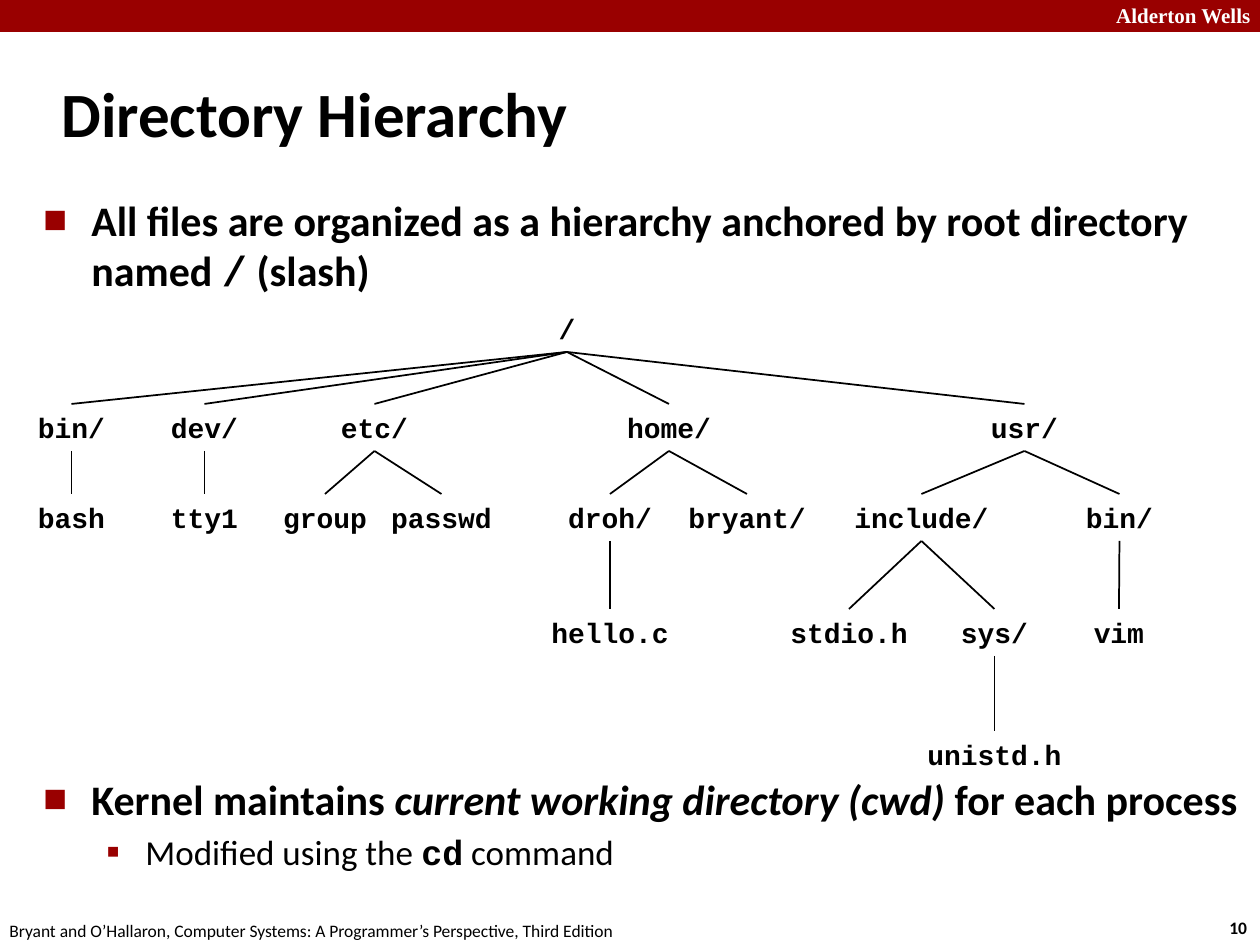
"""Build the Directory Hierarchy slide with its bulleted text and file tree."""
from lxml import etree
from pptx import Presentation
from pptx.dml.color import RGBColor
from pptx.enum.shapes import MSO_CONNECTOR, MSO_SHAPE
from pptx.enum.text import MSO_ANCHOR, PP_ALIGN
from pptx.oxml.ns import qn
from pptx.util import Pt

PX = 914400 // 126
LEFT, CENTER, RIGHT = PP_ALIGN.LEFT, PP_ALIGN.CENTER, PP_ALIGN.RIGHT
MIDDLE = MSO_ANCHOR.MIDDLE
RECTANGLE = MSO_SHAPE.RECTANGLE
STRAIGHT = MSO_CONNECTOR.STRAIGHT
BOTTOM_SIDE, TOP_SIDE = 2, 0
SANS, MONO, SERIF = "Calibri", "Courier New", "Times New Roman"
BLACK, WHITE, CRIMSON = "000000", "FFFFFF", "990000"
color = RGBColor.from_string


def add_box(left, top, width, height):
    box = slide.shapes.add_textbox(left * PX, top * PX, width * PX, height * PX)
    box.text_frame.word_wrap = True
    return box


def write(paragraph, size, runs, align=LEFT, ink=BLACK):
    paragraph.alignment = align
    for text, face, bold, italic in runs:
        run = paragraph.add_run()
        run.text = text
        run.font.name = face
        run.font.size = Pt(size)
        run.font.bold = bold
        run.font.italic = italic
        run.font.color.rgb = color(ink)


prs = Presentation()
prs.slide_width, prs.slide_height = 1260 * PX, 945 * PX
slide = prs.slides.add_slide(prs.slide_layouts[6])

banner = slide.shapes.add_shape(RECTANGLE, 0, 0, 1260 * PX, 32 * PX)
banner.shadow.inherit = False
banner.fill.solid()
banner.fill.fore_color.rgb = color(CRIMSON)
banner.line.fill.background()

captions = [
    ((1089, -4, 174, 38), 12, "Alderton Wells", SERIF, True, RIGHT, WHITE),
    ((1217, 911, 47, 34), 10, "10", SANS, True, LEFT, BLACK),
    ((-3, 914, 640, 34), 10,
     "Bryant and O’Hallaron, Computer Systems: A Programmer’s Perspective, Third Edition",
     SANS, False, LEFT, BLACK),
]
for place, size, text, face, bold, align, ink in captions:
    caption = add_box(*place)
    write(caption.text_frame.paragraphs[0], size, [(text, face, bold, False)], align, ink)

title = add_box(49, 60, 1046, 105)
title.text_frame.vertical_anchor = MIDDLE
write(title.text_frame.paragraphs[0], 36, [("Directory Hierarchy", SANS, True, False)])

main_style = (24, 48, 48, "■", 60)
detail_style = (20, 102, 39, "▪", 110)
points = [
    (188, 120, [
        (main_style, [
            ("All files are organized as a hierarchy anchored by root directory named ",
             SANS, True, False),
            ("/", MONO, True, False),
            (" (slash)", SANS, True, False)]),
    ]),
    (767, 120, [
        (main_style, [
            ("Kernel maintains ", SANS, True, False),
            ("current working directory (cwd) ", SANS, True, True),
            ("for each process", SANS, True, False)]),
        (detail_style, [
            ("Modified using the ", SANS, False, False),
            ("cd", MONO, True, False),
            (" command", SANS, False, False)]),
    ]),
]
for top, height, bullets in points:
    frame = add_box(31, top, 1226, height).text_frame
    for index, (style, runs) in enumerate(bullets):
        size, margin, hang, mark, percent = style
        bullet = frame.add_paragraph() if index else frame.paragraphs[0]
        bullet.space_before = Pt(size * 0.2)
        write(bullet, size, runs)
        props = bullet._p.get_or_add_pPr()
        props.set("marL", str(margin * PX))
        props.set("indent", str(-hang * PX))
        mark_color = etree.SubElement(props, qn("a:buClr"))
        etree.SubElement(mark_color, qn("a:srgbClr"), val=CRIMSON)
        etree.SubElement(props, qn("a:buSzPct"), val=str(percent * 1000))
        etree.SubElement(props, qn("a:buFont"), typeface=SANS)
        etree.SubElement(props, qn("a:buChar"), char=mark)

row_tops = [305, 404, 494, 609, 731]
entries = [
    ("", "/", 567),
    ("/", "bin/", 71),
    ("/", "dev/", 204),
    ("/", "etc/", 374),
    ("/", "home/", 669),
    ("/", "usr/", 1024),
    ("/bin/", "bash", 71),
    ("/dev/", "tty1", 204),
    ("/etc/", "group", 325),
    ("/etc/", "passwd", 441),
    ("/home/", "droh/", 610),
    ("/home/", "bryant/", 747),
    ("/usr/", "include/", 921),
    ("/usr/", "bin/", 1119),
    ("/home/droh/", "hello.c", 610),
    ("/usr/include/", "stdio.h", 849),
    ("/usr/include/", "sys/", 994),
    ("/usr/bin/", "vim", 1119),
    ("/usr/include/sys/", "unistd.h", 994),
]
tree = {}
for parent, name, middle in entries:
    width = 17 * len(name) + 25
    entry = add_box(middle - width // 2, row_tops[parent.count("/")], width, 47)
    entry.text_frame.word_wrap = False
    write(entry.text_frame.paragraphs[0], 16, [(name, MONO, True, False)], CENTER)
    tree[parent + name] = entry
    if parent:
        branch = slide.shapes.add_connector(STRAIGHT, 0, 0, 0, 0)
        branch.begin_connect(tree[parent], BOTTOM_SIDE)
        branch.end_connect(entry, TOP_SIDE)
        branch.line.color.rgb = color(BLACK)
        branch.line.width = Pt(1)
        etree.SubElement(branch._element.spPr, qn("a:effectLst"))

prs.save("out.pptx")
